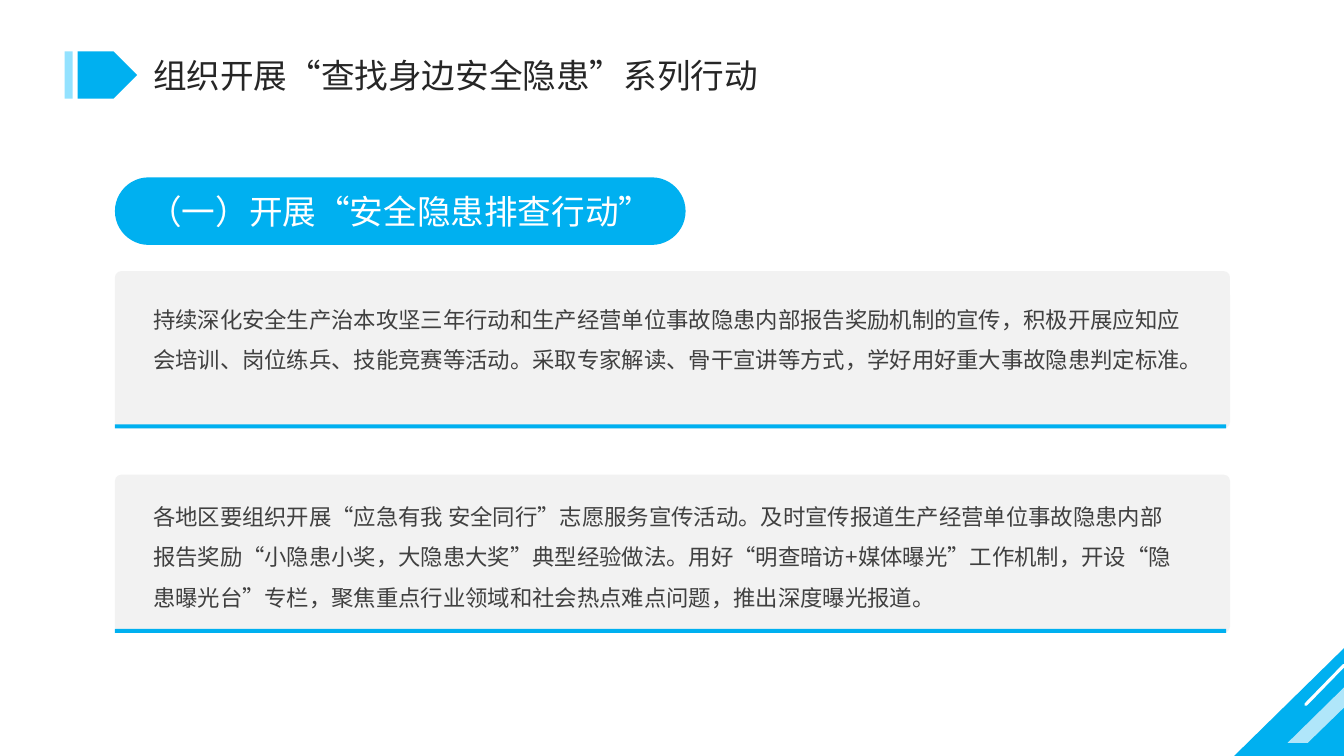
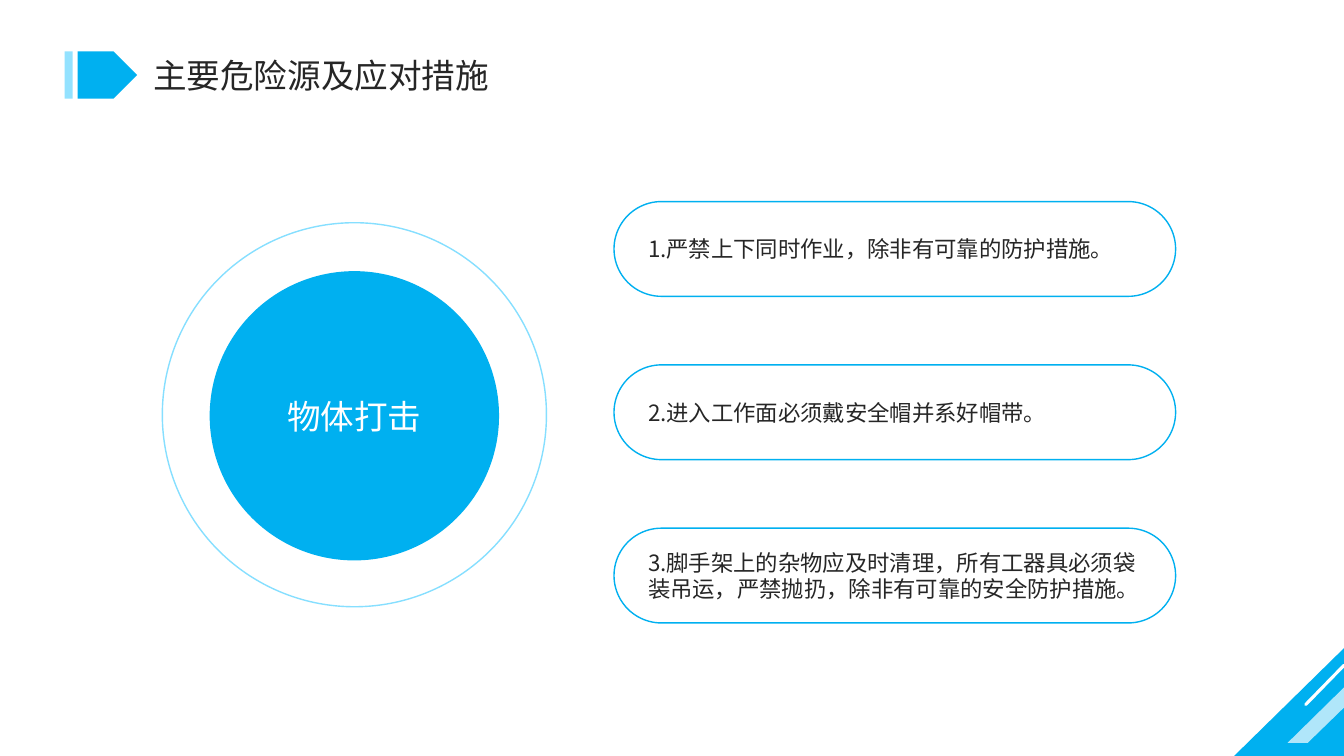
from lxml.etree import SubElement
from pptx import Presentation
from pptx.dml.color import RGBColor
from pptx.enum.shapes import MSO_CONNECTOR, MSO_SHAPE
from pptx.enum.text import MSO_ANCHOR, PP_ALIGN
from pptx.oxml.ns import qn
from pptx.util import Emu, Pt

PX = 9144  # EMU in one px: 100 px to the inch
SLIDE_WIDTH, SLIDE_HEIGHT = 1333, 750

BLUE = RGBColor(0x00, 0xB0, 0xF0)
PALE_BLUE = RGBColor(0x93, 0xE2, 0xFF)
RING_BLUE = RGBColor(0x86, 0xDF, 0xFF)
GREY = RGBColor(0xF2, 0xF2, 0xF2)
WHITE = RGBColor(0xFF, 0xFF, 0xFF)
INK = RGBColor(0x26, 0x26, 0x26)
BODY_INK = RGBColor(0x40, 0x40, 0x40)

FONT = "Noto Sans CJK SC"
HEADING_SIZE, BODY_SIZE = 24, 16

# (panel top, panel height, text top, text)
ACTIONS = [
    (269, 156, 285,
     "持续深化安全生产治本攻坚三年行动和生产经营单位事故隐患内部报告奖励机制的宣传，"
     "积极开展应知应会培训、岗位练兵、技能竞赛等活动。采取专家解读、骨干宣讲等方式，"
     "学好用好重大事故隐患判定标准。"),
    (471, 157, 481,
     "各地区要组织开展“应急有我 安全同行”志愿服务宣传活动。"
     "及时宣传报道生产经营单位事故隐患内部报告奖励“小隐患小奖，大隐患大奖”典型经验做法。"
     "用好“明查暗访+媒体曝光”工作机制，开设“隐患曝光台”专栏，"
     "聚焦重点行业领域和社会热点难点问题，推出深度曝光报道。"),
]

MEASURES = [
    "1.严禁上下同时作业，除非有可靠的防护措施。",
    "2.进入工作面必须戴安全帽并系好帽带。",
    "3.脚手架上的杂物应及时清理，所有工器具必须袋装吊运，严禁抛扔，除非有可靠的安全防护措施。",
]


def px(*lengths):
    return [Emu(length * PX) for length in lengths]


def paint(shape, fill=None, line=None):
    shape.shadow.inherit = False
    if fill is None:
        shape.fill.background()
    else:
        shape.fill.solid()
        shape.fill.fore_color.rgb = fill
    if line is None:
        shape.line.fill.background()
    else:
        shape.line.color.rgb = line
        shape.line.width = Pt(1)


def add_block(slide, preset, box, fill=None, line=None, adjust=None):
    block = slide.shapes.add_shape(preset, *px(*box))
    if adjust is not None:
        block.adjustments[0] = adjust
    paint(block, fill, line)
    return block


def write(shape, text, size, color, align=PP_ALIGN.LEFT):
    """Fill the shape's only paragraph, for Latin and East Asian letters alike."""
    paragraph = shape.text_frame.paragraphs[0]
    paragraph.text = text
    paragraph.alignment = align
    font = paragraph.font
    font.size = Pt(size)
    font.color.rgb = color
    font.name = FONT
    SubElement(font._rPr, qn("a:ea"), typeface=FONT)
    return paragraph


def write_centred(shape, text):
    shape.text_frame.vertical_anchor = MSO_ANCHOR.MIDDLE
    write(shape, text, HEADING_SIZE, WHITE, PP_ALIGN.CENTER)


def add_corner_stripe(slide):
    outline = slide.shapes.build_freeform(1333, 682, scale=PX)
    outline.add_line_segments([(1333, 702), (1297, 737), (1277, 737)])
    stripe = outline.convert_to_shape()
    paint(stripe, WHITE)
    color = stripe.element.spPr.find(f"{qn('a:solidFill')}/{qn('a:srgbClr')}")
    SubElement(color, qn("a:alpha"), val="69000")


def add_corner_line(slide):
    line = slide.shapes.add_connector(MSO_CONNECTOR.STRAIGHT, *px(1333, 660, 1295, 699))
    line.line.color.rgb = WHITE
    line.line.width = Pt(2.25)
    line.get_or_add_ln().set("cap", "rnd")
    SubElement(line.element.spPr, qn("a:effectLst"))


def move_decoration_to_layout(slide):
    """Draw the corner and the title marker, then hand them to the slide's layout."""
    add_block(slide, MSO_SHAPE.ISOSCELES_TRIANGLE, (1224, 643, 109, 107), BLUE, adjust=1)
    add_corner_stripe(slide)
    add_corner_line(slide)
    add_block(slide, MSO_SHAPE.PENTAGON, (77, 51, 59, 47), BLUE)
    add_block(slide, MSO_SHAPE.RECTANGLE, (64, 51, 8, 47), PALE_BLUE)

    layout = slide.slide_layout
    for placeholder in list(layout.placeholders):
        layout.shapes.element.remove(placeholder.element)
    for decoration in list(slide.shapes):
        layout.shapes.element.append(decoration.element)


def add_title(slide, text, width):
    title = slide.shapes.add_textbox(*px(142, 50, width, 50))
    title.text_frame.word_wrap = False
    write(title, text, HEADING_SIZE, INK)


def add_action(slide, top, height, text_top, text):
    add_block(slide, MSO_SHAPE.ROUNDED_RECTANGLE, (114, top, 1106, height), GREY, adjust=0.04)
    add_block(slide, MSO_SHAPE.RECTANGLE, (114, top + height - 4, 1102, 4), BLUE)
    body = slide.shapes.add_textbox(*px(142, text_top, 1040, 128))
    body.text_frame.word_wrap = True
    write(body, text, BODY_SIZE, BODY_INK).line_spacing = 1.5


def add_measure(slide, top, text):
    pill = add_block(slide, MSO_SHAPE.ROUNDED_RECTANGLE, (609, top, 557, 94),
                     WHITE, BLUE, adjust=0.5)
    pill.text_frame.margin_left = Emu(20 * PX)
    pill.text_frame.vertical_anchor = MSO_ANCHOR.MIDDLE
    write(pill, text, BODY_SIZE, INK)


def build_actions(slide):
    add_title(slide, "组织开展“查找身边安全隐患”系列行动", 620)
    for action in ACTIONS:
        add_action(slide, *action)
    heading = add_block(slide, MSO_SHAPE.ROUNDED_RECTANGLE, (114, 176, 566, 67), BLUE, adjust=0.5)
    write_centred(heading, "（一）开展“安全隐患排查行动”")


def build_hazard(slide):
    add_title(slide, "主要危险源及应对措施", 353)
    hazard = add_block(slide, MSO_SHAPE.OVAL, (208, 269, 287, 287), BLUE)
    write_centred(hazard, "物体打击")
    add_block(slide, MSO_SHAPE.OVAL, (161, 221, 381, 381), line=RING_BLUE)
    for row, measure in enumerate(MEASURES):
        add_measure(slide, 200 + 162 * row, measure)


def main():
    deck = Presentation()
    deck.slide_width, deck.slide_height = px(SLIDE_WIDTH, SLIDE_HEIGHT)
    blank = deck.slide_layouts[6]
    actions = deck.slides.add_slide(blank)
    move_decoration_to_layout(actions)
    build_actions(actions)
    build_hazard(deck.slides.add_slide(blank))
    deck.save("out.pptx")


if __name__ == "__main__":
    main()
